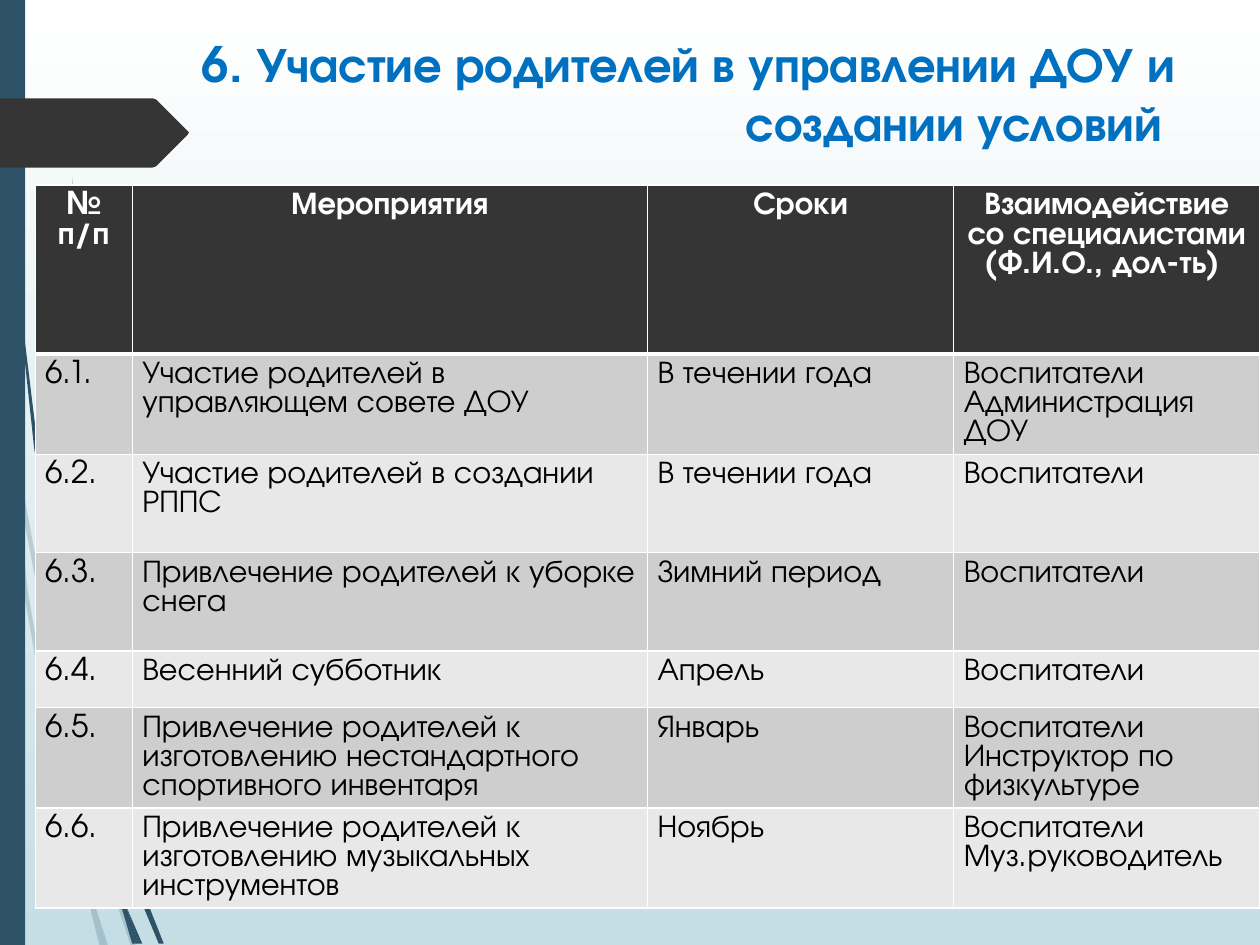
from pptx import Presentation
from pptx.dml.color import RGBColor
from pptx.enum.shapes import MSO_SHAPE as SHAPE
from pptx.enum.text import MSO_ANCHOR as ANCHOR, PP_ALIGN as ALIGN
from pptx.oxml import parse_xml
from pptx.oxml.ns import nsdecls, qn
from pptx.util import Pt

PX = 9144  # EMU in one px, 100 px to the inch
FONT = "TeX Gyre Adventor"
COLORS = {
    "white": "FFFFFF", "sky": "C5DEE5", "navy": "2E5369", "dark": "353535",
    "title": "0070C0", "black": "000000", "odd": "CECECE", "even": "E8E8E8",
}

# Outlines of the stems on the left edge, in px
PALE_STEMS = [
    [(8, 350), (6, 322), (0, 282), (0, 299), (7, 344)],
    [(40, 522), (59, 599), (59, 586), (43, 520), (10, 345), (12, 376)],
    [(64, 607), (61, 596), (61, 610), (85, 694), (104, 751), (108, 751),
     (88, 692)],
    [(83, 751), (86, 751), (73, 711)],
    [(64, 683), (48, 619), (22, 469), (12, 376), (8, 350), (19, 470),
     (45, 621), (64, 693), (70, 714), (69, 707)],
    [(58, 599), (60, 646), (64, 683), (67, 692), (73, 711), (72, 706),
     (63, 646), (61, 610), (61, 608)],
    [(61, 584), (76, 462), (111, 349), (159, 245), (187, 198), (201, 175),
     (217, 154), (217, 153), (201, 175), (186, 197), (158, 244), (110, 348),
     (75, 461), (59, 584), (59, 586), (61, 596)],
    [(70, 714), (79, 751), (82, 751)],
    [(61, 608), (61, 610), (61, 596), (59, 586), (58, 599)],
    [(67, 692), (65, 683), (69, 707), (70, 714), (82, 751), (83, 751),
     (73, 711)],
]
DARK_STEMS = [
    [(5, 110), (14, 233), (27, 355), (46, 477), (47, 481), (45, 457),
     (45, 453), (30, 355), (15, 232), (6, 109), (4, 48), (3, 0), (2, 0),
     (3, 48)],
    [(73, 592), (88, 645), (88, 633), (88, 631), (77, 590), (50, 472),
     (53, 505)],
    [(94, 649), (91, 641), (91, 656), (109, 708), (126, 749), (130, 749),
     (113, 706)],
    [(91, 691), (81, 657), (60, 556), (53, 505), (47, 477), (56, 557),
     (77, 659), (92, 708), (97, 722), (96, 717)],
    [(50, 472), (48, 453), (44, 349), (48, 245), (52, 193), (58, 141),
     (51, 193), (47, 245), (43, 349), (45, 449), (49, 472)],
    [(110, 749), (113, 749), (100, 719)],
    [(47, 477), (53, 505), (50, 472), (49, 472), (45, 449), (45, 453)],
    [(91, 633), (103, 552), (131, 476), (169, 406), (191, 374), (203, 359),
     (216, 344), (215, 344), (203, 358), (191, 373), (168, 405), (129, 474),
     (101, 551), (88, 631), (91, 641)],
    [(97, 722), (105, 749), (108, 749)],
    [(88, 645), (91, 691), (96, 706), (100, 719), (100, 716), (91, 656),
     (90, 651)],
    [(88, 645), (90, 651), (91, 656), (91, 641), (88, 631), (88, 633)],
    [(96, 706), (91, 691), (96, 717), (97, 722), (108, 749), (110, 749),
     (100, 719)],
]
ARROW = [(149, 107), (124, 132), (121, 133), (0, 133), (0, 78), (121, 78),
         (124, 79), (149, 104), (150, 105)]

TITLE = "6. Участие родителей в управлении ДОУ и создании условий "
COLUMNS = [77, 409, 243, 243]
ROW_HEIGHTS = [134, 78, 78, 78, 45, 78, 78]
HEADER = ["№ п/п", "Мероприятия", "Сроки",
          "Взаимодействие со специалистами (Ф.И.О., дол-ть) "]
# Activity, time, people; the numbers 6.1 to 6.6 follow from the order
ACTIVITIES = [
    ("Участие родителей в управляющем совете ДОУ", "В течении года",
     "Воспитатели\nАдминистрация ДОУ"),
    ("Участие родителей в создании РППС", "В течении года", "Воспитатели"),
    ("Привлечение родителей к уборке снега", "Зимний период", "Воспитатели"),
    ("Весенний субботник", "Апрель", "Воспитатели"),
    ("Привлечение родителей к изготовлению нестандартного спортивного "
     "инвентаря", "Январь", "Воспитатели\nИнструктор по физкультуре"),
    ("Привлечение родителей к изготовлению музыкальных инструментов",
     "Ноябрь", "Воспитатели\nМуз.руководитель"),
]


def rgb(name):
    return RGBColor.from_string(COLORS[name])


def set_attrs(obj, **values):
    for name, value in values.items():
        setattr(obj, name, value)


def paint(s, color):
    s.shadow.inherit = False
    s.fill.solid()
    s.fill.fore_color.rgb = rgb(color)
    s.line.fill.background()


def add_outline(shapes, points, color, alpha=None):
    builder = shapes.build_freeform(*points[0], scale=PX)
    builder.add_line_segments(points[1:], close=True)
    s = builder.convert_to_shape()
    paint(s, color)
    if alpha:
        clr = s._element.spPr.find(qn("a:solidFill"))[0]
        clr.append(parse_xml(f'<a:alpha {nsdecls("a")} val="{alpha * 1000}"/>'))


def write(tf, text, size, color, bold=False, align=ALIGN.LEFT, spacing=1.0):
    for i, line in enumerate(text.split("\n")):
        p = tf.add_paragraph() if i else tf.paragraphs[0]
        set_attrs(p, alignment=align, line_spacing=spacing)
        r = p.add_run()
        r.text = line
        set_attrs(r.font, name=FONT, size=Pt(size), bold=bold)
        r.font.color.rgb = rgb(color)


def add_title(slide):
    tf = slide.shapes.add_textbox(43 * PX, 22 * PX, 900 * PX, 125 * PX).text_frame
    set_attrs(tf, word_wrap=True, vertical_anchor=ANCHOR.TOP)
    write(tf, TITLE, 27.9, "title", bold=True, align=ALIGN.RIGHT)


def set_borders(cell, widths):
    tc_pr = cell._tc.get_or_add_tcPr()
    for side, width in widths.items():
        tc_pr.append(parse_xml(
            f'<a:ln{side} {nsdecls("a")} w="{Pt(width)}"><a:solidFill>'
            f'<a:srgbClr val="{COLORS["white"]}"/></a:solidFill></a:ln{side}>'))


def add_plan_table(slide):
    rows = [HEADER] + [(f"6.{n}.", *row) for n, row in enumerate(ACTIVITIES, 1)]
    table = slide.shapes.add_table(
        len(rows), len(COLUMNS), 28 * PX, 147 * PX,
        sum(COLUMNS) * PX, sum(ROW_HEIGHTS) * PX).table
    for column, width in zip(table.columns, COLUMNS):
        column.width = width * PX
    for i, (row, height) in enumerate(zip(rows, ROW_HEIGHTS)):
        table.rows[i].height = height * PX
        head = i == 0
        fill = "dark" if head else "odd" if i % 2 else "even"
        look = (dict(color="white", bold=True, align=ALIGN.CENTER) if head
                else dict(color="black"))
        for j, text in enumerate(row):
            cell = table.cell(i, j)
            set_attrs(cell, margin_left=8 * PX, margin_right=8 * PX,
                      margin_top=5 * PX, margin_bottom=5 * PX)
            set_borders(cell, {"L": 1, "R": 1, "T": 3 if i == 1 else 1,
                               "B": 3 if head else 1})
            cell.fill.solid()
            cell.fill.fore_color.rgb = rgb(fill)
            write(cell.text_frame, text, 18, spacing=Pt(16.7), **look)


def set_background(slide):
    fill = slide.background.fill
    fill.gradient()
    fill.gradient_angle = 270
    for stop, color in zip(fill.gradient_stops, ("white", "sky")):
        stop.color.rgb = rgb(color)


def main():
    prs = Presentation()
    set_attrs(prs, slide_width=1000 * PX, slide_height=750 * PX)
    slide = prs.slides.add_slide(prs.slide_layouts[6])
    set_background(slide)

    # Decoration on the left edge
    for stems, alpha in ((PALE_STEMS, 20), (DARK_STEMS, None)):
        group = slide.shapes.add_group_shape()
        for points in stems:
            add_outline(group.shapes, points, "navy", alpha)
    paint(slide.shapes.add_shape(SHAPE.RECTANGLE, 0, 0, 20 * PX, 750 * PX), "navy")
    add_outline(slide.shapes, ARROW, "dark")

    # Content
    add_title(slide)
    add_plan_table(slide)
    prs.save("out.pptx")


if __name__ == "__main__":
    main()
